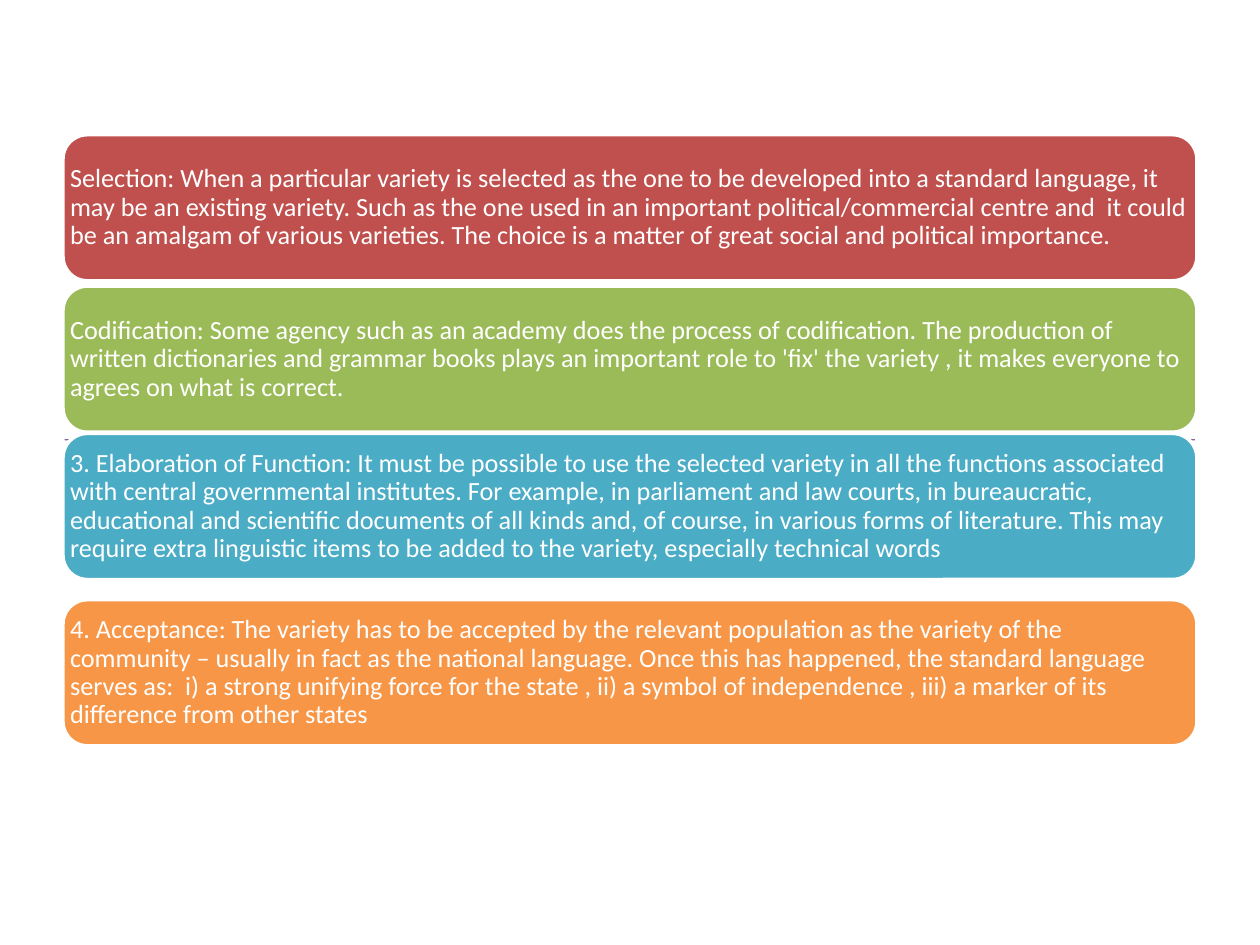
from dataclasses import dataclass

from pptx import Presentation
from pptx.dml.color import RGBColor
from pptx.enum.shapes import MSO_SHAPE
from pptx.enum.text import MSO_ANCHOR, PP_ALIGN
from pptx.util import Pt

ROUNDED_RECTANGLE = MSO_SHAPE.ROUNDED_RECTANGLE
MIDDLE = MSO_ANCHOR.MIDDLE
LEFT = PP_ALIGN.LEFT

WHITE = RGBColor(0xFF, 0xFF, 0xFF)
RED = RGBColor(0xC0, 0x50, 0x4D)
GREEN = RGBColor(0x9B, 0xBB, 0x59)
PURPLE = RGBColor(0x80, 0x64, 0xA2)
BLUE = RGBColor(0x4B, 0xAC, 0xC6)
ORANGE = RGBColor(0xF7, 0x96, 0x46)

BAR_LEFT = 36
BAR_WIDTH = 648
BAR_HEIGHT = 83.5


@dataclass(frozen=True)
class Bar:
    top: float
    color: RGBColor
    text: str = ""
    height: float = BAR_HEIGHT


BARS = [
    Bar(77, RED,
        "Selection: When a particular variety is selected as the one to be "
        "developed into a standard language, it may be an existing variety. "
        "Such as the one used in an important political/commercial centre and  "
        "it could be an amalgam of various varieties. The choice is a matter "
        "of great social and political importance."),
    Bar(163.5, GREEN,
        "Codification: Some agency such as an academy does the process of "
        "codification. The production of written dictionaries and grammar "
        "books plays an important role to 'fix' the variety , it makes "
        "everyone to agrees on what is correct."),
    Bar(249.8, PURPLE, height=2.9),
    Bar(247.7, BLUE,
        "3. Elaboration of Function: It must be possible to use the selected "
        "variety in all the functions associated with central governmental "
        "institutes. For example, in parliament and law courts, in "
        "bureaucratic, educational and scientific documents of all kinds and, "
        "of course, in various forms of literature. This may require extra "
        "linguistic items to be added to the variety, especially technical "
        "words"),
    Bar(342.7, ORANGE,
        "4. Acceptance: The variety has to be accepted by the relevant "
        "population as the variety of the community – usually in fact as the "
        "national language. Once this has happened, the standard language "
        "serves as:  i) a strong unifying force for the state , ii) a symbol "
        "of independence , iii) a marker of its difference from other states"),
]


def draw_bar(slide, bar: Bar) -> None:
    shape = slide.shapes.add_shape(
        ROUNDED_RECTANGLE,
        Pt(BAR_LEFT), Pt(bar.top), Pt(BAR_WIDTH), Pt(bar.height),
    )
    shape.shadow.inherit = False
    shape.fill.solid()
    shape.fill.fore_color.rgb = bar.color
    shape.line.color.rgb = WHITE
    shape.line.width = Pt(2)
    if bar.text:
        write_text(shape.text_frame, bar.text)


def write_text(frame, text: str) -> None:
    """Fill the frame; the rounded corners alone give the text its margin."""
    frame.word_wrap = True
    frame.vertical_anchor = MIDDLE
    frame.margin_left = frame.margin_right = Pt(0)
    frame.margin_top = frame.margin_bottom = Pt(0)
    paragraph = frame.paragraphs[0]
    paragraph.text = text
    paragraph.alignment = LEFT
    paragraph.line_spacing = 0.9
    paragraph.font.name = "Calibri"
    paragraph.font.size = Pt(15)
    paragraph.font.color.rgb = WHITE


def main() -> None:
    presentation = Presentation()
    presentation.slide_width = Pt(720)
    presentation.slide_height = Pt(540)
    slide = presentation.slides.add_slide(presentation.slide_layouts[6])
    for bar in BARS:
        draw_bar(slide, bar)
    presentation.save("out.pptx")


if __name__ == "__main__":
    main()
